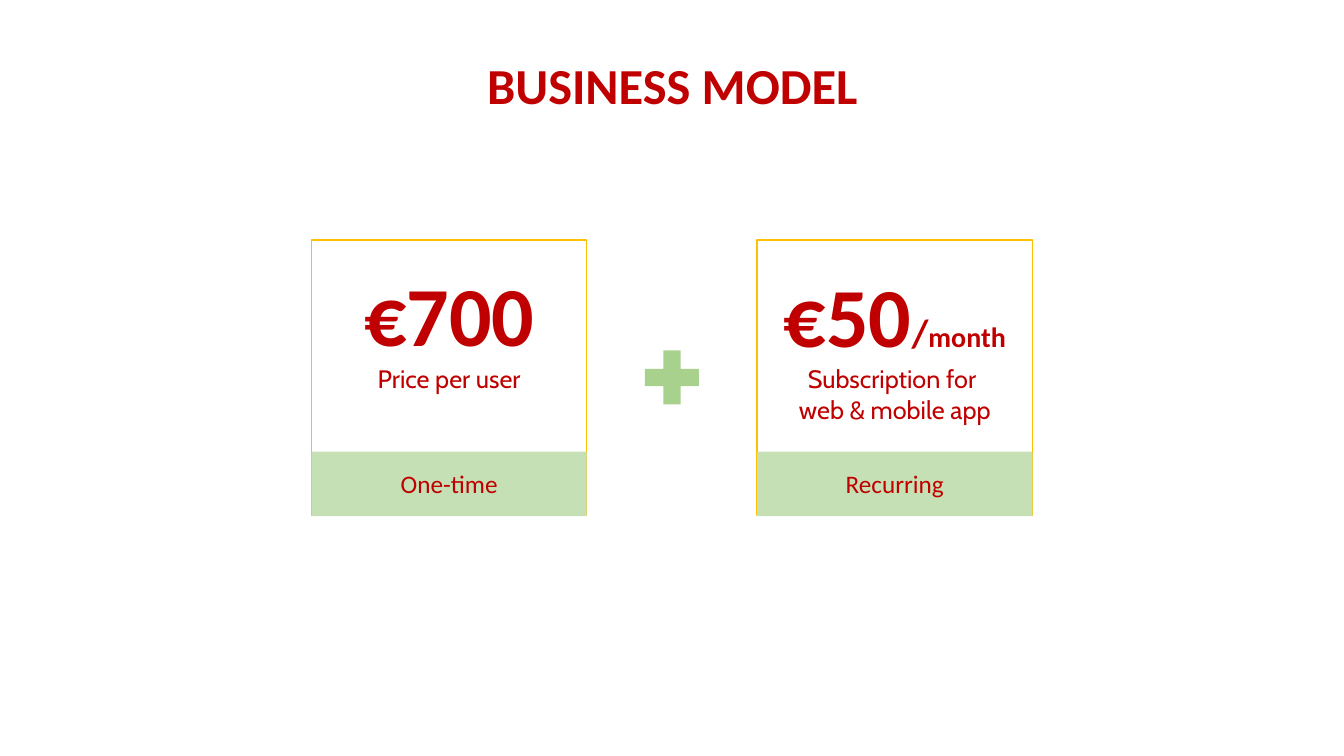
from pptx import Presentation
from pptx.dml.color import RGBColor
from pptx.enum.shapes import MSO_SHAPE as SHAPE
from pptx.enum.text import MSO_ANCHOR as ANCHOR, PP_ALIGN as ALIGN
from pptx.util import Inches, Pt

RED, GOLD, GREEN, PALE_GREEN = "C00000", "FFC000", "A9D18E", "C5E0B4"
CARD_SIZE, CARD_TOP = 2.73, 2.38


def rgb(value):
    return RGBColor.from_string(value)


def style(r, size, font="Calibri", bold=False):
    r.font.size, r.font.name, r.font.bold = Pt(size), font, bold
    r.font.color.rgb = rgb(RED)


def add_shape(s, kind, x, y, w, h, fill=None, line=None):
    sp = s.shapes.add_shape(kind, Inches(x), Inches(y), Inches(w), Inches(h))
    sp.shadow.inherit = False
    if fill:
        sp.fill.solid()
        sp.fill.fore_color.rgb = rgb(fill)
    else:
        sp.fill.background()
    if line:
        sp.line.color.rgb = rgb(line)
        sp.line.width = Pt(1)
    else:
        sp.line.fill.background()


def add_text(s, x, y, w, h, lines):
    """Each line is a list of (text, size, font, bold) runs."""
    tf = s.shapes.add_textbox(Inches(x), Inches(y), Inches(w), Inches(h)).text_frame
    tf.word_wrap = True
    p = tf.paragraphs[0]
    p.alignment = ALIGN.CENTER
    for i, runs in enumerate(lines):
        if i:
            p.add_line_break()
        for text, *look in runs:
            r = p.add_run()
            r.text = text
            style(r, *look)


def add_title(s, x, y, w, h, text):
    sp = s.shapes.title
    sp.left, sp.top, sp.width, sp.height = map(Inches, (x, y, w, h))
    tf = sp.text_frame
    tf.text = text
    tf.vertical_anchor = ANCHOR.TOP
    p = tf.paragraphs[0]
    p.alignment = ALIGN.CENTER
    style(p.runs[0], 36, bold=True)


def add_price_card(s, x, y, size, price, details, billing):
    # Price and what it covers
    lines = [[(text, pt, "Calibri", True) for text, pt in price]]
    lines += [[(text, 18, "Cabin", False)] for text in details]
    add_text(s, x + 0.01, y + 0.18, size - 0.02, 1.01 + 0.35 * len(details), lines)
    # Frame with the billing band along its foot
    add_shape(s, SHAPE.RECTANGLE, x, y, size, size, line=GOLD)
    add_shape(s, SHAPE.RECTANGLE, x, y + 2.1, size, 0.64, fill=PALE_GREEN)
    add_text(s, x, y + 2.22, size, 0.4, [[(billing, 18, "Calibri", False)]])


def main():
    prs = Presentation()
    prs.slide_width, prs.slide_height = Inches(13.33), Inches(7.5)
    s = prs.slides.add_slide(prs.slide_layouts[5])

    add_title(s, 3.9, 0.49, 5.54, 0.71, "BUSINESS MODEL")
    # Plus sign between the two prices
    add_shape(s, SHAPE.MATH_PLUS, 6.3, 3.38, 0.73, 0.73, fill=GREEN)
    # One-time and recurring income
    add_price_card(s, 3.09, CARD_TOP, CARD_SIZE, [("€700", 60)],
                   ["Price per user"], "One-time")
    add_price_card(s, 7.51, CARD_TOP, CARD_SIZE,
                   [("€50", 60), ("/", 28), ("month", 20)],
                   ["Subscription for ", "web & mobile app"], "Recurring")
    prs.save("out.pptx")


if __name__ == "__main__":
    main()
